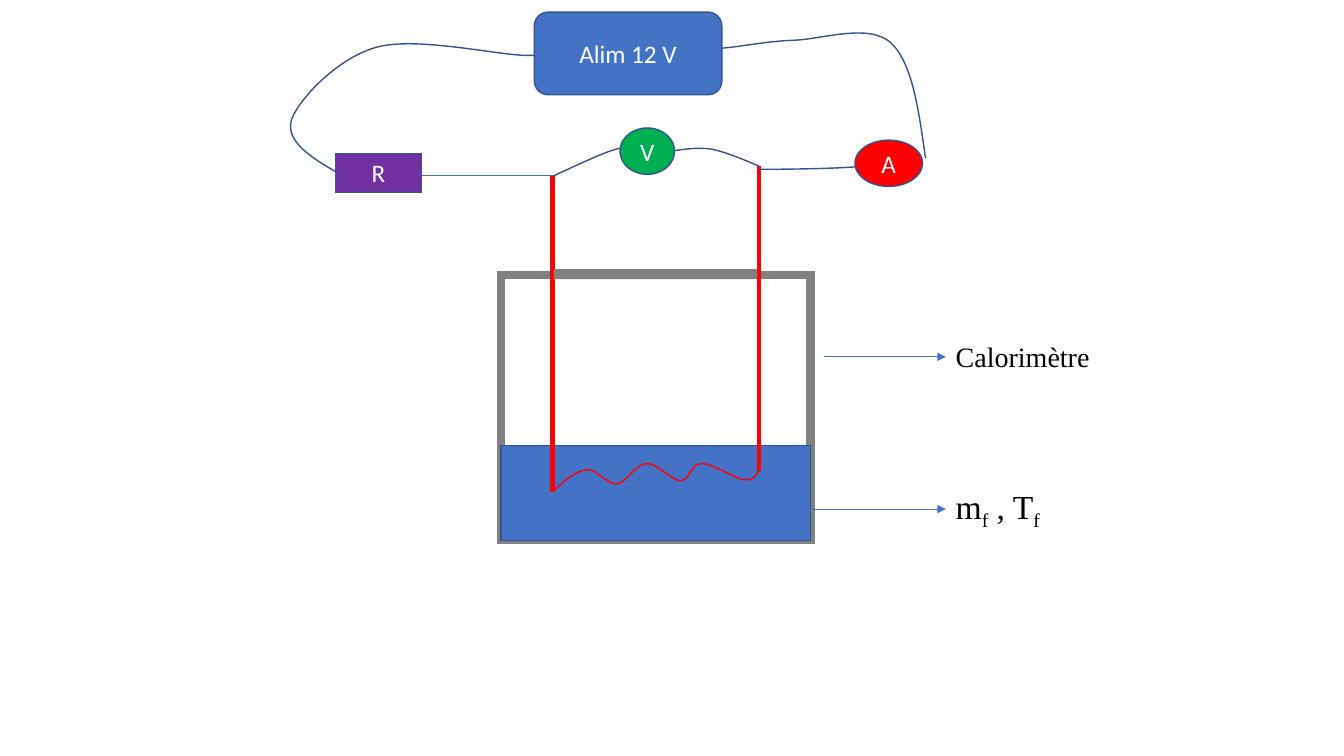
from dataclasses import dataclass

from lxml import etree
from pptx import Presentation
from pptx.dml.color import RGBColor
from pptx.enum.shapes import MSO_CONNECTOR, MSO_SHAPE
from pptx.enum.text import MSO_ANCHOR, MSO_AUTO_SIZE, PP_ALIGN
from pptx.oxml.ns import qn
from pptx.util import Inches, Pt

RECTANGLE = MSO_SHAPE.RECTANGLE
ROUNDED = MSO_SHAPE.ROUNDED_RECTANGLE
OVAL = MSO_SHAPE.OVAL
STRAIGHT = MSO_CONNECTOR.STRAIGHT
MIDDLE = MSO_ANCHOR.MIDDLE
CENTER = PP_ALIGN.CENTER
FIT_SHAPE = MSO_AUTO_SIZE.SHAPE_TO_FIT_TEXT
LEFT_SIDE = 1


@dataclass(frozen=True)
class Theme:
    blue: str = "4472C4"
    wire: str = "325491"
    red: str = "FF0000"
    green: str = "00B050"
    purple: str = "7030A0"
    gray: str = "808080"
    black: str = "000000"
    white: str = "FFFFFF"
    device_font: str = "Calibri"
    label_font: str = "Times New Roman"
    device_size: int = 18
    label_size: int = 20
    symbol_size: int = 24
    thin: float = 0.5
    outline: float = 1
    electrode: float = 3
    wall: float = 6


def color(value):
    return RGBColor.from_string(value)


def add_text(paragraph, text, *, font, size, fill, subscript=False):
    run = paragraph.add_run()
    run.text = text
    run.font.name = font
    run.font.size = Pt(size)
    run.font.color.rgb = color(fill)
    if subscript:
        run.font._element.set("baseline", "-25000")


class CircuitSlide:
    def __init__(self, slide, theme):
        self.slide = slide
        self.theme = theme

    def style(self, shape, fill, line, width):
        shape.shadow.inherit = False
        if fill:
            shape.fill.solid()
            shape.fill.fore_color.rgb = color(fill)
        else:
            shape.fill.background()
        if line:
            shape.line.color.rgb = color(line)
            shape.line.width = Pt(width)
            outline = shape.line._get_or_add_ln()
            etree.SubElement(outline, qn("a:miter"), lim="800000")
        else:
            shape.line.fill.background()

    def block(self, kind, box, fill=None, line=None, width=1, text=""):
        shape = self.slide.shapes.add_shape(kind, *map(Inches, box))
        self.style(shape, fill, line, width)
        if text:
            shape.text_frame.vertical_anchor = MIDDLE
            paragraph = shape.text_frame.paragraphs[0]
            paragraph.alignment = CENTER
            add_text(paragraph, text, font=self.theme.device_font,
                     size=self.theme.device_size, fill=self.theme.white)
        return shape

    def label(self, box, parts, size):
        """Add a text box from (text, is subscript) parts."""
        shape = self.slide.shapes.add_textbox(*map(Inches, box))
        shape.text_frame.word_wrap = True
        shape.text_frame.auto_size = FIT_SHAPE
        for text, subscript in parts:
            add_text(shape.text_frame.paragraphs[0], text,
                     font=self.theme.label_font, size=size,
                     fill=self.theme.black, subscript=subscript)
        return shape

    def line(self, start, end, stroke, width, arrow=False):
        connector = self.slide.shapes.add_connector(
            STRAIGHT, *map(Inches, (*start, *end)))
        connector.line.color.rgb = color(stroke)
        connector.line.width = Pt(width)
        if arrow:
            outline = connector.line._get_or_add_ln()
            etree.SubElement(outline, qn("a:tailEnd"), type="triangle")
        etree.SubElement(connector._element.spPr, qn("a:effectLst"))
        return connector

    def curve(self, start, segments, stroke):
        """Draw cubic segments, each given as x1, y1, x2, y2, end x, end y."""
        ends = [(Inches(s[4]), Inches(s[5])) for s in segments]
        builder = self.slide.shapes.build_freeform(*map(Inches, start))
        builder.add_line_segments(ends, close=False)
        shape = builder.convert_to_shape()
        steps = list(shape._element.iter(qn("a:lnTo")))
        for step, segment in zip(steps, segments):
            step.tag = qn("a:cubicBezTo")
            for index in (0, 1):
                x, y = map(Inches, segment[2 * index:2 * index + 2])
                point = etree.Element(qn("a:pt"), x=str(x - shape.left),
                                      y=str(y - shape.top))
                step.insert(index, point)
        self.style(shape, None, stroke, self.theme.outline)


def draw_calorimeter(circuit):
    theme = circuit.theme
    circuit.block(RECTANGLE, (4.97, 2.73, 3.07, 2.63),
                  line=theme.gray, width=theme.wall)
    circuit.block(RECTANGLE, (4.97, 4.42, 3.07, 0.94), theme.blue, theme.wire)
    circuit.line((7.73, 5.05), (9.38, 5.05), theme.blue, theme.thin, arrow=True)
    circuit.label((9.38, 4.77, 2.24, 0.5),
                  [("m", False), ("f", True), (" , T", False), ("f", True)],
                  theme.symbol_size)
    pointer = circuit.line((8.17, 3.54), (9.38, 3.54), theme.blue, theme.thin,
                           arrow=True)
    name = circuit.label((9.38, 3.32, 1.98, 0.44), [("Calorimètre", False)],
                         theme.label_size)
    pointer.end_connect(name, LEFT_SIDE)


def draw_heater(circuit):
    theme = circuit.theme
    circuit.line((5.48, 1.74), (5.48, 4.88), theme.red, theme.electrode)
    circuit.curve((5.49, 4.87), [
        (5.6, 4.77, 5.71, 4.67, 5.82, 4.66),
        (5.92, 4.65, 6.02, 4.81, 6.12, 4.8),
        (6.21, 4.79, 6.31, 4.6, 6.41, 4.6),
        (6.52, 4.59, 6.66, 4.77, 6.75, 4.77),
        (6.84, 4.77, 6.85, 4.6, 6.95, 4.6),
        (7.06, 4.59, 7.29, 4.75, 7.38, 4.76),
        (7.48, 4.77, 7.5, 4.72, 7.53, 4.66)], theme.red)
    circuit.line((7.53, 4.67), (7.53, 1.65), theme.red, theme.electrode)


def draw_devices(circuit):
    theme = circuit.theme
    circuit.line((5.49, 1.74), (4.05, 1.74), theme.blue, theme.thin)
    circuit.block(RECTANGLE, (3.33, 1.52, 0.85, 0.39), theme.purple,
                  theme.wire, text="R")
    circuit.curve((3.34, 1.71), [
        (3.08, 1.56, 2.83, 1.4, 2.89, 1.19),
        (2.96, 0.99, 3.34, 0.58, 3.73, 0.47),
        (4.12, 0.36, 4.89, 0.54, 5.21, 0.55),
        (5.54, 0.55, 5.6, 0.53, 5.67, 0.51)], theme.wire)
    circuit.curve((7.53, 1.68), [(7.94, 1.68, 8.35, 1.67, 8.55, 1.65)],
                  theme.wire)
    circuit.block(OVAL, (8.48, 1.39, 0.67, 0.46), theme.red, theme.wire,
                  text="A")
    circuit.curve((9.18, 1.57), [
        (9.11, 1.09, 9.05, 0.62, 8.83, 0.42),
        (8.61, 0.23, 8.15, 0.39, 7.87, 0.4),
        (7.58, 0.41, 7.33, 0.47, 7.13, 0.48),
        (6.94, 0.49, 6.83, 0.47, 6.71, 0.47),
        (6.59, 0.47, 6.49, 0.48, 6.39, 0.48)], theme.wire)
    circuit.block(ROUNDED, (5.3, 0.12, 1.86, 0.82), theme.blue, theme.wire,
                  text="Alim 12 V")
    circuit.curve((5.48, 1.75), [
        (5.72, 1.64, 5.95, 1.53, 6.08, 1.49),
        (6.2, 1.45, 6.22, 1.47, 6.24, 1.49)], theme.wire)
    circuit.curve((7.53, 1.65), [
        (7.37, 1.58, 7.2, 1.51, 7.06, 1.48),
        (6.91, 1.46, 6.79, 1.48, 6.66, 1.5)], theme.wire)
    circuit.block(OVAL, (6.15, 1.27, 0.54, 0.46), theme.green, theme.wire,
                  text="V")
    circuit.block(ROUNDED, (5.49, 2.67, 2.02, 0.1), theme.gray)


def main():
    presentation = Presentation()
    presentation.slide_width = Inches(13.33)
    presentation.slide_height = Inches(7.5)
    slide = presentation.slides.add_slide(presentation.slide_layouts[6])
    circuit = CircuitSlide(slide, Theme())
    draw_calorimeter(circuit)
    draw_heater(circuit)
    draw_devices(circuit)
    presentation.save("out.pptx")


if __name__ == "__main__":
    main()
